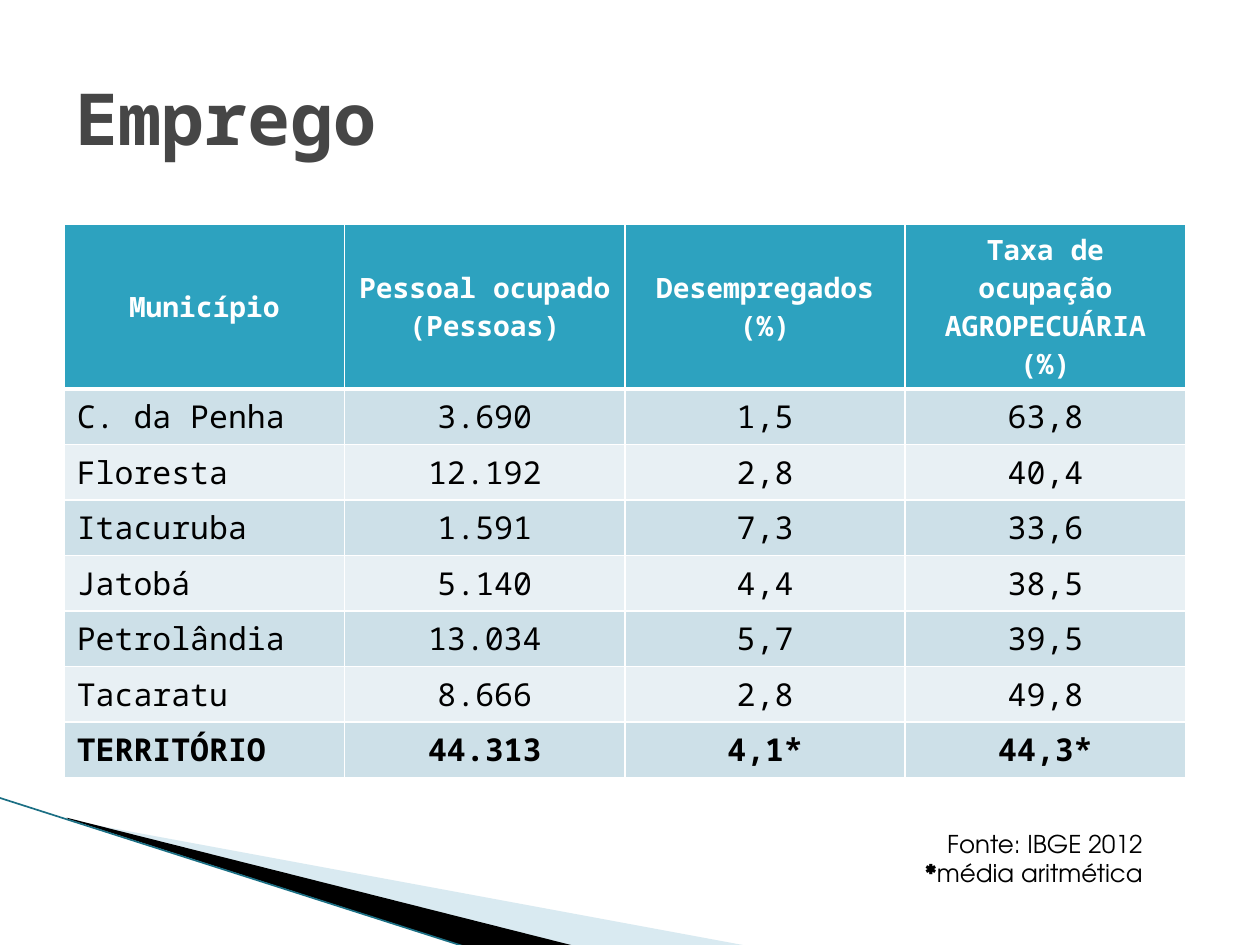
from lxml import etree
from pptx import Presentation
from pptx.dml.color import RGBColor
from pptx.enum.shapes import MSO_CONNECTOR
from pptx.enum.text import MSO_ANCHOR, PP_ALIGN
from pptx.oxml.ns import qn
from pptx.util import Inches, Pt

LEFT, CENTER, RIGHT = PP_ALIGN.LEFT, PP_ALIGN.CENTER, PP_ALIGN.RIGHT
MIDDLE, TOP = MSO_ANCHOR.MIDDLE, MSO_ANCHOR.TOP
STRAIGHT = MSO_CONNECTOR.STRAIGHT
MONO, SANS = "Noto Sans Mono", "TeX Gyre Adventor"
COLORS = {
    "title": "464646", "white": "FFFFFF", "black": "000000",
    "header": "2DA2BF", "band_dark": "CDE0E8", "band_light": "E8F0F4",
    "wedge": "A0CBDC", "edge": "1B6F84",
}
HEADER = ["Município", "Pessoal ocupado (Pessoas)", "Desempregados (%)",
          "Taxa de ocupação AGROPECUÁRIA (%)"]
ROWS = [
    ["C. da Penha", "3.690", "1,5", "63,8"],
    ["Floresta", "12.192", "2,8", "40,4"],
    ["Itacuruba", "1.591", "7,3", "33,6"],
    ["Jatobá", "5.140", "4,4", "38,5"],
    ["Petrolândia", "13.034", "5,7", "39,5"],
    ["Tacaratu", "8.666", "2,8", "49,8"],
    ["TERRITÓRIO", "44.313", "4,1*", "44,3*"],
]


def rgb(name):
    return RGBColor.from_string(COLORS[name])


def add_run(p, text, size, font, color, bold=False):
    r = p.add_run()
    r.text = text
    r.font.size, r.font.name, r.font.bold = Pt(size), font, bold
    r.font.color.rgb = rgb(color)


def add_wedge(slide, points, color, opacity=100):
    """Draw a filled polygon without outline; opacity is in percent."""
    pts = [(Inches(x), Inches(y)) for x, y in points]
    builder = slide.shapes.build_freeform(*pts[0])
    builder.add_line_segments(pts[1:], close=True)
    sp = builder.convert_to_shape()
    sp.shadow.inherit = False
    sp.line.fill.background()
    sp.fill.solid()
    sp.fill.fore_color.rgb = rgb(color)
    if opacity < 100:
        clr = sp.fill._xPr.find(".//" + qn("a:srgbClr"))
        etree.SubElement(clr, qn("a:alpha"), val=str(opacity * 1000))


def add_corner(slide, x, y):
    """Draw the swoosh whose wedges meet at (x, y)."""
    add_wedge(slide, [(x + 0.02, y + 0.02), (x + 5.42, y + 1.02),
                      (x + 4.03, y + 1.02), (x + 0.02, y + 0.01)], "wedge", 40)
    add_wedge(slide, [(x, y), (x + 4.04, y + 1.02),
                      (x + 3.19, y + 1.03), (x + 0.01, y + 0.01)], "black")
    edge = slide.shapes.add_connector(
        STRAIGHT, Inches(x - 0.54), Inches(y - 0.16), Inches(x + 3.18), Inches(y + 1.03))
    edge.line.color.rgb = rgb("edge")
    edge.line.width = Pt(0.95)
    etree.SubElement(edge._element.spPr, qn("a:effectLst"))


def set_title(slide, x, y, w, h):
    sp = slide.shapes.title
    sp.left, sp.top, sp.width, sp.height = map(Inches, (x, y, w, h))
    tf = sp.text_frame
    tf.vertical_anchor = MIDDLE
    p = tf.paragraphs[0]
    p.alignment = LEFT
    add_run(p, "Emprego", 41, MONO, "title", True)


def set_borders(cell, top, bottom):
    """Give a cell white borders; top and bottom are widths in points."""
    tc_pr = cell._tc.get_or_add_tcPr()
    for side, width in (("L", 1), ("R", 1), ("T", top), ("B", bottom)):
        ln = etree.SubElement(tc_pr, qn("a:ln" + side), w=str(Pt(width)))
        fill = etree.SubElement(ln, qn("a:solidFill"))
        etree.SubElement(fill, qn("a:srgbClr"), val=COLORS["white"])


def add_employment_table(slide, x, y, w, header_h, row_h):
    data = [HEADER] + ROWS
    h = header_h + row_h * len(ROWS)
    table = slide.shapes.add_table(
        len(data), len(HEADER), Inches(x), Inches(y), Inches(w), Inches(h)).table
    for col in table.columns:
        col.width = Inches(w / len(HEADER))
    for i, values in enumerate(data):
        is_header = i == 0
        table.rows[i].height = Inches(header_h if is_header else row_h)
        band = "header" if is_header else "band_dark" if i % 2 else "band_light"
        size, color = (16, "white") if is_header else (18, "black")
        for j, value in enumerate(values):
            cell = table.cell(i, j)
            set_borders(cell, 3 if i == 1 else 1, 3 if is_header else 1)
            cell.fill.solid()
            cell.fill.fore_color.rgb = rgb(band)
            cell.vertical_anchor = MIDDLE if is_header else TOP
            p = cell.text_frame.paragraphs[0]
            p.alignment = CENTER if is_header or j else LEFT
            add_run(p, value, size, MONO, color, i in (0, len(ROWS)))


def add_source_note(slide, x, y, w, h):
    tf = slide.shapes.add_textbox(*map(Inches, (x, y, w, h))).text_frame
    tf.word_wrap = True
    source, note = tf.paragraphs[0], tf.add_paragraph()
    source.alignment = note.alignment = RIGHT
    add_run(source, "Fonte: IBGE 2012", 14, SANS, "black")
    add_run(note, "*", 14, SANS, "black", True)
    add_run(note, "média aritmética", 14, SANS, "black")


def main():
    prs = Presentation()
    prs.slide_width, prs.slide_height = Inches(10), Inches(7.5)
    slide = prs.slides.add_slide(prs.slide_layouts[5])
    add_corner(slide, 0.53, 6.49)
    set_title(slide, 0.5, 0.3, 9, 1.25)
    add_employment_table(slide, 0.51, 1.78, 8.9, 1.3, 0.44)
    add_source_note(slide, 6.81, 6.53, 2.36, 0.57)
    prs.save("out.pptx")


if __name__ == "__main__":
    main()
